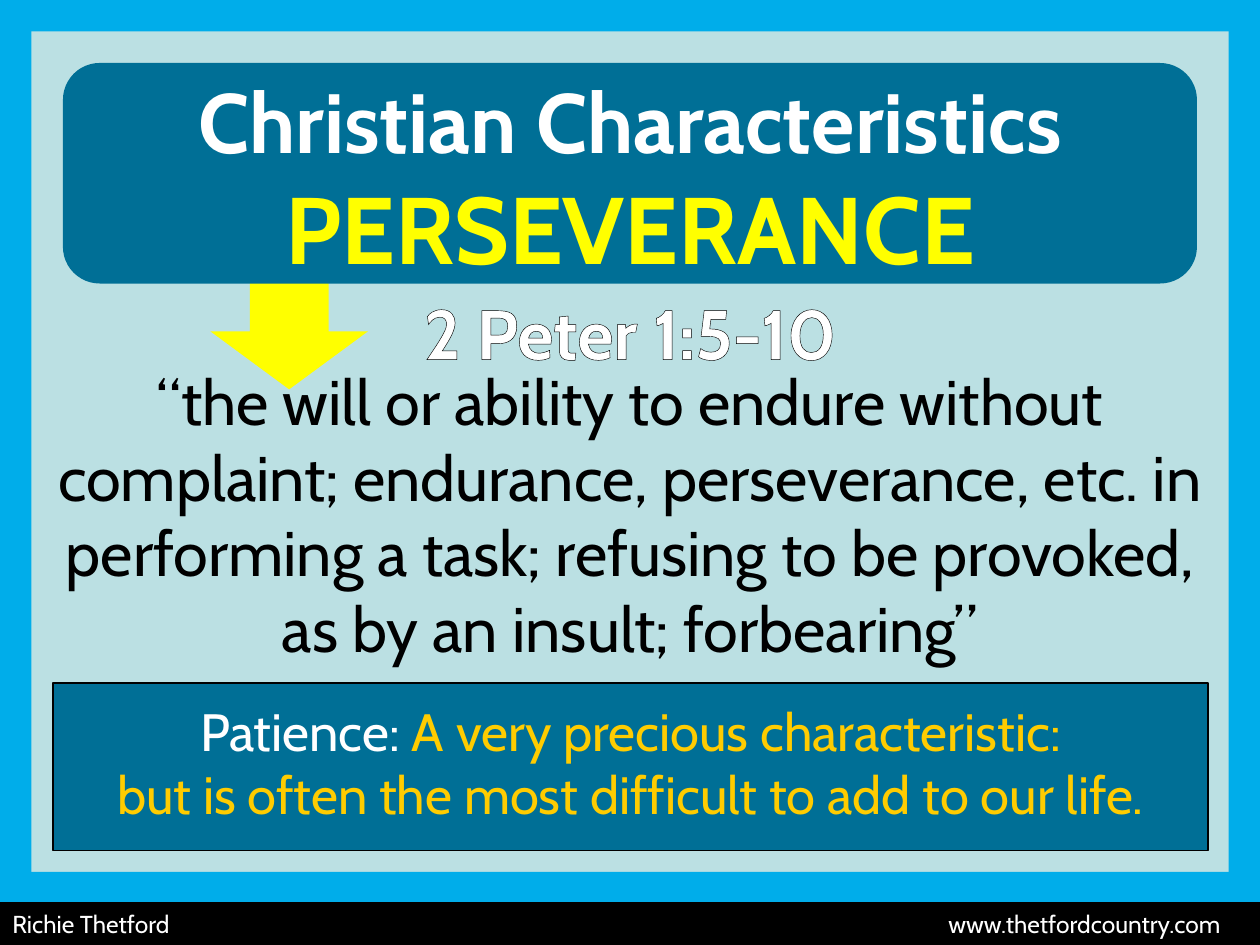
from lxml import etree
from pptx import Presentation
from pptx.dml.color import RGBColor
from pptx.enum import shapes, text
from pptx.oxml import parse_xml
from pptx.oxml.ns import nsdecls, qn
from pptx.util import Inches, Pt

FONT = "Cabin"
WHITE, BLACK, YELLOW, GOLD = "FFFFFF", "000000", "FFFF00", "FFCC00"
SKY, TEAL, PALE = "00ADEA", "006F96", "BBE0E3"
SHAPE = shapes.MSO_SHAPE
ALIGN = text.PP_ALIGN


def paint(fill, color):
    fill.solid()
    fill.fore_color.rgb = RGBColor.from_string(color)


def add_block(slide, kind, box, color, line=None):
    block = slide.shapes.add_shape(kind, *map(Inches, box))
    block.shadow.inherit = False
    paint(block.fill, color)
    if line:
        paint(block.line.fill, line)
        block.line.width = Pt(1)
    else:
        block.line.fill.background()
    return block


def add_text_box(slide, box):
    return slide.shapes.add_textbox(*map(Inches, box))


def write(shape, lines, align=ALIGN.CENTER, anchor=text.MSO_ANCHOR.TOP, bold=False,
          outline=False, shadow=False):
    """Fill a shape with lines, each a list of (words, size, color) runs."""
    frame = shape.text_frame
    frame.word_wrap = True
    frame.auto_size = text.MSO_AUTO_SIZE.NONE
    frame.vertical_anchor = anchor
    for index, line in enumerate(lines):
        paragraph = frame.add_paragraph() if index else frame.paragraphs[0]
        paragraph.alignment = align
        for words, size, color in line:
            run = paragraph.add_run()
            run.text = words
            font = run.font
            font.name, font.size, font.bold = FONT, Pt(size), bold
            paint(font.fill, color)
            properties = run._r.get_or_add_rPr()
            if outline:
                properties.insert(0, parse_xml(
                    f'<a:ln {nsdecls("a")} w="12700"><a:solidFill>'
                    f'<a:srgbClr val="{BLACK}"/></a:solidFill></a:ln>'))
            if shadow:
                properties.find(qn("a:solidFill")).addnext(parse_xml(
                    f'<a:effectLst {nsdecls("a")}>'
                    '<a:outerShdw dist="35921" dir="2700000" algn="ctr">'
                    f'<a:srgbClr val="{BLACK}"/></a:outerShdw></a:effectLst>'))


def add_frame(slide, left, top, width, height, band=0.25):
    for box in [
        (left, top, band, height),
        (left + width - band, top, band, height),
        (left, top, width, band),
        (left, 6.92, width, band),
    ]:
        add_block(slide, SHAPE.RECTANGLE, box, SKY)


def add_definition(slide, left, top, width, height):
    add_block(slide, SHAPE.DOWN_ARROW, (left + 1.42, top - 0.66, 1.25, 0.92), YELLOW)
    definition = (
        "“the will or ability to endure without complaint; endurance, "
        "perseverance, etc. in performing a task; refusing to be provoked, "
        "as by an insult; forbearing”")
    write(add_text_box(slide, (left, top, width, height)), [[(definition, 36, BLACK)]])


def add_lesson(slide, left, top, width, height):
    add_block(slide, SHAPE.RECTANGLE, (left, top, width, height), TEAL, line=BLACK)
    write(add_text_box(slide, (left, top + 0.08, width, 1.11)), [
        [("Patience:", 30, WHITE), (" A very precious characteristic:", 30, GOLD)],
        [("but is often the most difficult to add to our life.", 30, GOLD)],
    ], shadow=True)


def add_heading(slide, left, top, width, height):
    add_block(slide, SHAPE.ROUNDED_RECTANGLE, (left, top, width, height), TEAL)
    title = slide.shapes.title
    title.left, title.top = Inches(left), Inches(top)
    title.width, title.height = Inches(width), Inches(1.82)
    write(title, [
        [("Christian Characteristics", 48, WHITE)],
        [("PERSEVERANCE", 54, YELLOW)],
    ], bold=True)
    slide.shapes._spTree.append(title._element)  # bring in front of its panel


def add_reference(slide, *box):
    write(add_text_box(slide, box), [[("2 Peter 1:5-10", 40, WHITE)]],
          bold=True, outline=True)


def add_footer(slide, left, top, width, height):
    footer = add_block(slide, SHAPE.RECTANGLE, (left, top, width, height), BLACK)
    write(footer, [[("Richie Thetford\twww.thetfordcountry.com", 14, WHITE)]],
          align=ALIGN.LEFT, anchor=text.MSO_ANCHOR.MIDDLE)
    properties = footer.text_frame.paragraphs[0]._p.get_or_add_pPr()
    tabs = etree.SubElement(properties, qn("a:tabLst"))
    etree.SubElement(tabs, qn("a:tab"), pos=str(Inches(width - 0.41)), algn="r")


def main():
    deck = Presentation()
    deck.slide_width, deck.slide_height = Inches(10), Inches(7.5)
    slide = deck.slides.add_slide(deck.slide_layouts[5])
    paint(slide.background.fill, PALE)
    add_definition(slide, 0.25, 2.83, 9.5, 2.5)
    add_frame(slide, 0, 0, 10, 7.5)
    add_lesson(slide, 0.42, 5.42, 9.17, 1.33)
    add_heading(slide, 0.5, 0.5, 9, 1.75)
    add_reference(slide, 0.25, 2.25, 9.5, 0.77)
    add_footer(slide, 0, 7.16, 10, 0.34)
    deck.save("out.pptx")


if __name__ == "__main__":
    main()
